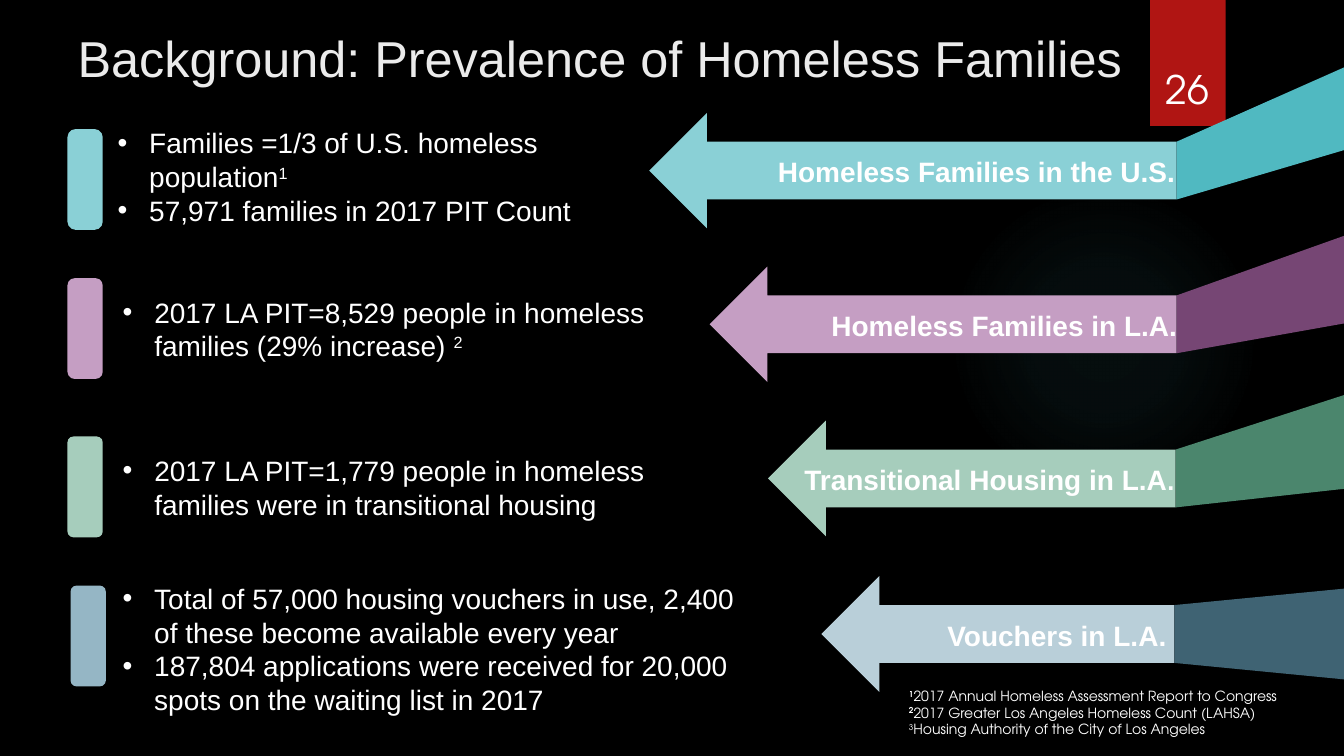
from lxml.etree import SubElement
from pptx import Presentation
from pptx.dml.color import RGBColor
from pptx.enum.shapes import MSO_SHAPE as Form
from pptx.enum.text import MSO_ANCHOR as Anchor, MSO_AUTO_SIZE as Fit, PP_ALIGN as Align
from pptx.oxml import parse_xml
from pptx.oxml.ns import nsdecls, qn
from pptx.util import Pt

# Content: a run is (text, raised), a paragraph is a list of runs
TITLE = "Background: Prevalence of Homeless Families"
PAGE = "26"
SANS, ROUND = "Arial", "TeX Gyre Adventor"
WHITE = "FFFFFF"

# Boxes are (left, top, width, height); ends are the band's right top and bottom
ROWS = [
    dict(label=[("Homeless Families in the U.S.", 20)], spot=(548.6, 327),
         arrow=(463.7, 80.6, 840.5), fill="8AD0D6",
         tab=(48.2, 92.2), tint="8AD0D6", curve=0.231,
         band="50B9C1", ends=(48.2, 107.3), box=(77, 86.4, 397.4, 80),
         facts=[[("Families =1/3 of U.S. homeless population", False), ("1", True)],
                [("57,971 families in 2017 PIT Count", False)]]),
    dict(label=[("Homeless Families in L.A.", 20)], spot=(586.8, 272),
         arrow=(506.9, 190.4, 840.5), fill="C59EC3",
         tab=(48.2, 198.7), tint="C59EC3", curve=0.204,
         band="764674", ends=(168.5, 231.1), box=(80.6, 207.4, 397.4, 55.4),
         facts=[[("2017 LA PIT=8,529 people in homeless families (29% increase) ", False),
                 ("2", True)]]),
    dict(label=[("Transitional Housing in L.A", 20), (".", 18)], spot=(567.4, 303),
         arrow=(548.6, 300.5, 839.7), fill="A6CDBC",
         tab=(48.2, 311.8), tint="A6CDBC", curve=0.167,
         band="4B866D", ends=(282.2, 349.2), box=(80.6, 320.4, 397.4, 55.4),
         facts=[[("2017 LA PIT=1,779 people in homeless families were in "
                  "transitional housing", False)]]),
    dict(label=[("Vouchers in L.A.", 20)], spot=(669.6, 271),
         arrow=(586.8, 411.6, 838.8), fill="B9CFD9",
         tab=(50.4, 418.3), tint="95B6C5", curve=0.167,
         band="3F6373", ends=(420.5, 485.3), box=(80.6, 411.8, 470.2, 104.4),
         facts=[[("Total of 57,000 housing vouchers in use, 2,400 of these become "
                  "available every year", False)],
                [("187,804 applications were received for 20,000 spots on the "
                  "waiting list in 2017", False)]]),
]
NOTES = [("1", True, "2017 Annual Homeless Assessment Report to Congress"),
         ("2", True, "2017 Greater Los Angeles Homeless Count (LAHSA)"),
         ("3", False, "Housing Authority of the City of Los Angeles")]
GLOW = [(0, 7), (36, 6), (69, 0)]  # position and opacity, in percent
HEAD = 82.6                        # arrow height; its shaft is the middle half
INDENT = 22.5


def color(code):
    return RGBColor.from_string(code)


def paint(shape, code):
    shape.shadow.inherit = False
    shape.fill.solid()
    shape.fill.fore_color.rgb = color(code)
    shape.line.fill.background()


def add_form(form, box, code):
    shape = slide.shapes.add_shape(form, *map(Pt, box))
    paint(shape, code)
    return shape


def add_box(box, anchor=Anchor.TOP):
    frame = slide.shapes.add_textbox(*map(Pt, box)).text_frame
    frame.word_wrap = True
    frame.vertical_anchor = anchor
    return frame


def add_run(para, text, size, face=SANS, bold=False, raised=False, code=WHITE):
    run = para.add_run()
    run.text = text
    font = run.font
    font.size, font.name, font.bold = Pt(size), face, bold
    font.color.rgb = color(code)
    if raised:
        run._r.get_or_add_rPr().set("baseline", "30000")


def next_para(frame, first):
    return frame.paragraphs[0] if first else frame.add_paragraph()


def add_bullet(para):
    props = para._p.get_or_add_pPr()
    props.set("marL", str(Pt(INDENT)))
    props.set("indent", str(-Pt(INDENT)))
    SubElement(props, qn("a:buFont"), typeface=SANS)
    SubElement(props, qn("a:buChar"), char="•")


def add_glow(box):
    glow = add_form(Form.OVAL, box, "50B9C1")
    stops = "".join(
        f'<a:gs pos="{pos * 1000}"><a:srgbClr val="50B9C1">'
        f'<a:alpha val="{alpha * 1000}"/></a:srgbClr></a:gs>' for pos, alpha in GLOW)
    fade = parse_xml(
        f'<a:gradFill {nsdecls("a")}><a:gsLst>{stops}</a:gsLst><a:path path="circle">'
        '<a:fillToRect l="50000" t="50000" r="50000" b="50000"/></a:path></a:gradFill>')
    props = glow._element.spPr
    props.replace(props.find(qn("a:solidFill")), fade)


def add_row(row):
    left, top, joint = row["arrow"]
    # Arrow and its label
    add_form(Form.LEFT_ARROW, (left, top, joint - left, HEAD), row["fill"])
    start, width = row["spot"]
    para = add_box((start, top + 26.5, width, 31.7)).paragraphs[0]
    for text, size in row["label"]:
        add_run(para, text, size, bold=True)
    # Band from the arrow's shaft to the slide edge
    high, low = row["ends"]
    path = slide.shapes.build_freeform(Pt(960), Pt(high))
    path.add_line_segments([(Pt(960), Pt(low)), (Pt(joint), Pt(top + HEAD * 3 / 4)),
                            (Pt(joint), Pt(top + HEAD / 4))], close=True)
    paint(path.convert_to_shape(), row["band"])
    # Tab and facts
    tab = add_form(Form.ROUNDED_RECTANGLE, (*row["tab"], 25.2, 72), row["tint"])
    tab.adjustments[0] = row["curve"]
    frame = add_box(row["box"])
    for i, fact in enumerate(row["facts"]):
        para = next_para(frame, i == 0)
        add_bullet(para)
        for text, raised in fact:
            add_run(para, text, 20, raised=raised)


deck = Presentation()
deck.slide_width, deck.slide_height = Pt(960), Pt(540)
slide = deck.slides.add_slide(deck.slide_layouts[5])
slide.background.fill.solid()
slide.background.fill.fore_color.rgb = color("000000")

# Backdrop
add_glow((677.5, 131.8, 221.8, 221.8))
add_form(Form.RECTANGLE, (821.5, 0, 54, 90), "B01513")

# Title
title = slide.shapes.title
title.left, title.top, title.width, title.height = map(Pt, (48.2, 15.8, 766.8, 74.9))
frame = title.text_frame
frame.auto_size, frame.vertical_anchor = Fit.NONE, Anchor.TOP
frame.paragraphs[0].alignment = Align.LEFT
add_run(frame.paragraphs[0], TITLE, 36, code="EBEBEB")

# Rows
for row in ROWS:
    add_row(row)

# Notes
frame = add_box((642.2, 487.4, 317.8, 43.9))
for i, (mark, bold, text) in enumerate(NOTES):
    para = next_para(frame, i == 0)
    add_run(para, mark, 10, ROUND, bold, True)
    add_run(para, text, 10, ROUND)

# Page number
para = add_box((815, 23, 66.2, 60.5), Anchor.BOTTOM).paragraphs[0]
para.alignment = Align.CENTER
add_run(para, PAGE, 28, ROUND)

deck.save("out.pptx")
